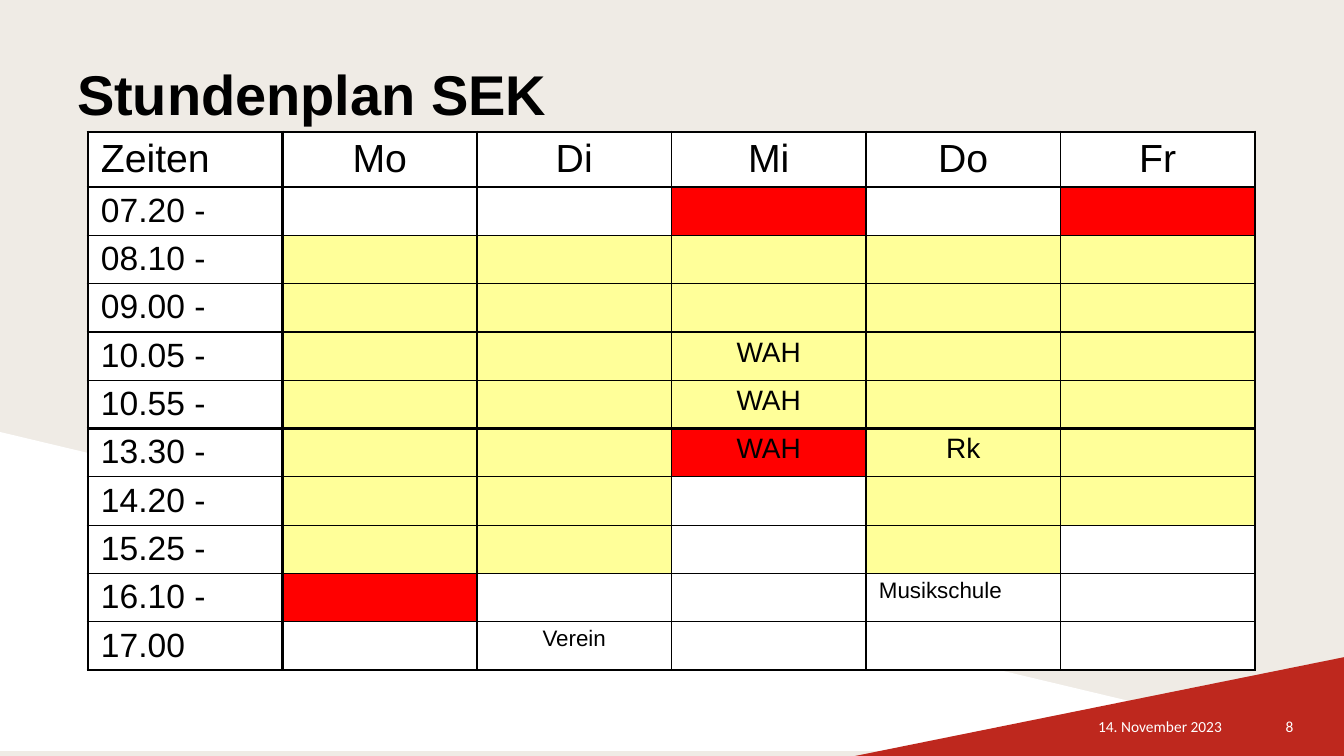
"""Build the weekly school timetable slide."""
from lxml.etree import SubElement
from pptx import Presentation
from pptx.dml.color import RGBColor
from pptx.enum.shapes import MSO_SHAPE as Shape
from pptx.enum.text import MSO_ANCHOR as Anchor, PP_ALIGN as Align
from pptx.oxml.ns import qn
from pptx.util import Pt

BLACK = RGBColor(0, 0, 0)
WHITE = RGBColor(255, 255, 255)
YELLOW = RGBColor(255, 255, 153)
RED = RGBColor(255, 0, 0)
BRICK = RGBColor(190, 40, 30)
SAND = RGBColor(239, 235, 229)
FILLS = {"W": WHITE, "Y": YELLOW, "R": RED}


def px(*lengths):
    """Turn pixels into EMU."""
    return [round(length * 914400 / 100.8) for length in lengths]


def add_text(frame, text, size, align, color=BLACK, font="Arial", bold=False):
    """Write one formatted run into a text frame."""
    para = frame.paragraphs[0]
    para.alignment = align
    para.space_before = Pt(0)
    span = para.add_run()
    span.text = text
    span.font.size = Pt(size)
    span.font.name = font
    span.font.bold = bold
    span.font.color.rgb = color


deck = Presentation()
deck.slide_width, deck.slide_height = px(1344, 756)
page = deck.slides.add_slide(deck.slide_layouts[5])
page.background.fill.solid()
page.background.fill.fore_color.rgb = SAND

title = page.shapes.title
title.left, title.top, title.width, title.height = px(67, 30, 1210, 126)
title.text_frame.vertical_anchor = Anchor.MIDDLE
add_text(title.text_frame, "Stundenplan SEK", 40, Align.LEFT, bold=True)

for place, color, flipped in [((0, 432, 1339, 319), WHITE, "0"),
                              ((855, 657, 490, 99), BRICK, "1")]:
    triangle = page.shapes.add_shape(Shape.RIGHT_TRIANGLE, *px(*place))
    triangle.shadow.inherit = False
    triangle.fill.solid()
    triangle.fill.fore_color.rgb = color
    triangle.line.fill.background()
    triangle.element.spPr.get_or_add_xfrm().set("flipH", flipped)

for place, text, align in [((871, 706, 361, 40), "14. November 2023", Align.RIGHT),
                           ((1254, 706, 71, 40), "8", Align.CENTER)]:
    box = page.shapes.add_textbox(*px(*place))
    box.text_frame.word_wrap = True
    box.text_frame.vertical_anchor = Anchor.MIDDLE
    add_text(box.text_frame, text, 11, align, WHITE, "Calibri")

HEADINGS = ["Zeiten", "Mo", "Di", "Mi", "Do", "Fr"]
LESSONS = [
    ("07.20 -", "WWRWR"),
    ("08.10 -", "YYYYY"),
    ("09.00 -", "YYYYY"),
    ("10.05 -", "YYYYY"),
    ("10.55 -", "YYYYY"),
    ("13.30 -", "YYRYY"),
    ("14.20 -", "YYWYY"),
    ("15.25 -", "YYWYW"),
    ("16.10 -", "RWWWW"),
    ("17.00", "WWWWW"),
]
ENTRIES = {
    (4, 3): ("WAH", 20, Align.CENTER),
    (5, 3): ("WAH", 20, Align.CENTER),
    (6, 3): ("WAH", 20, Align.CENTER),
    (6, 4): ("Rk", 20, Align.CENTER),
    (9, 4): ("Musikschule", 16, Align.LEFT),
    (10, 2): ("Verein", 16, Align.CENTER),
}
for column, heading in enumerate(HEADINGS):
    ENTRIES[0, column] = (heading, 28, Align.CENTER if column else Align.LEFT)
for row, (time, _) in enumerate(LESSONS, 1):
    ENTRIES[row, 0] = (time, 24, Align.LEFT)

THICK_COLUMN_EDGES = {0, 1, 6}
THICK_ROW_EDGES = {0, 1, 6, 11}
grid = page.shapes.add_table(11, 6, *px(88, 132, 1167, 534)).table
grid.first_row = False
grid.horz_banding = False
for row, line in enumerate(grid.rows):
    line.height = px(48 if row else 54)[0]
    fills = "W" + LESSONS[row - 1][1] if row else "WWWWWW"
    for column, cell in enumerate(line.cells):
        cell.margin_left, cell.margin_right = px(13, 13)
        cell.margin_top, cell.margin_bottom = px(5, 3)
        edges = {
            "a:lnL": column in THICK_COLUMN_EDGES,
            "a:lnR": column + 1 in THICK_COLUMN_EDGES,
            "a:lnT": row in THICK_ROW_EDGES,
            "a:lnB": row + 1 in THICK_ROW_EDGES,
        }
        properties = cell._tc.get_or_add_tcPr()
        for tag, thick in edges.items():
            border = SubElement(properties, qn(tag), w=str(Pt(2.25 if thick else 1)))
            paint = SubElement(border, qn("a:solidFill"))
            SubElement(paint, qn("a:srgbClr"), val=str(BLACK))
        cell.fill.solid()
        cell.fill.fore_color.rgb = FILLS[fills[column]]
        if (row, column) in ENTRIES:
            add_text(cell.text_frame, *ENTRIES[row, column])

deck.save("out.pptx")
